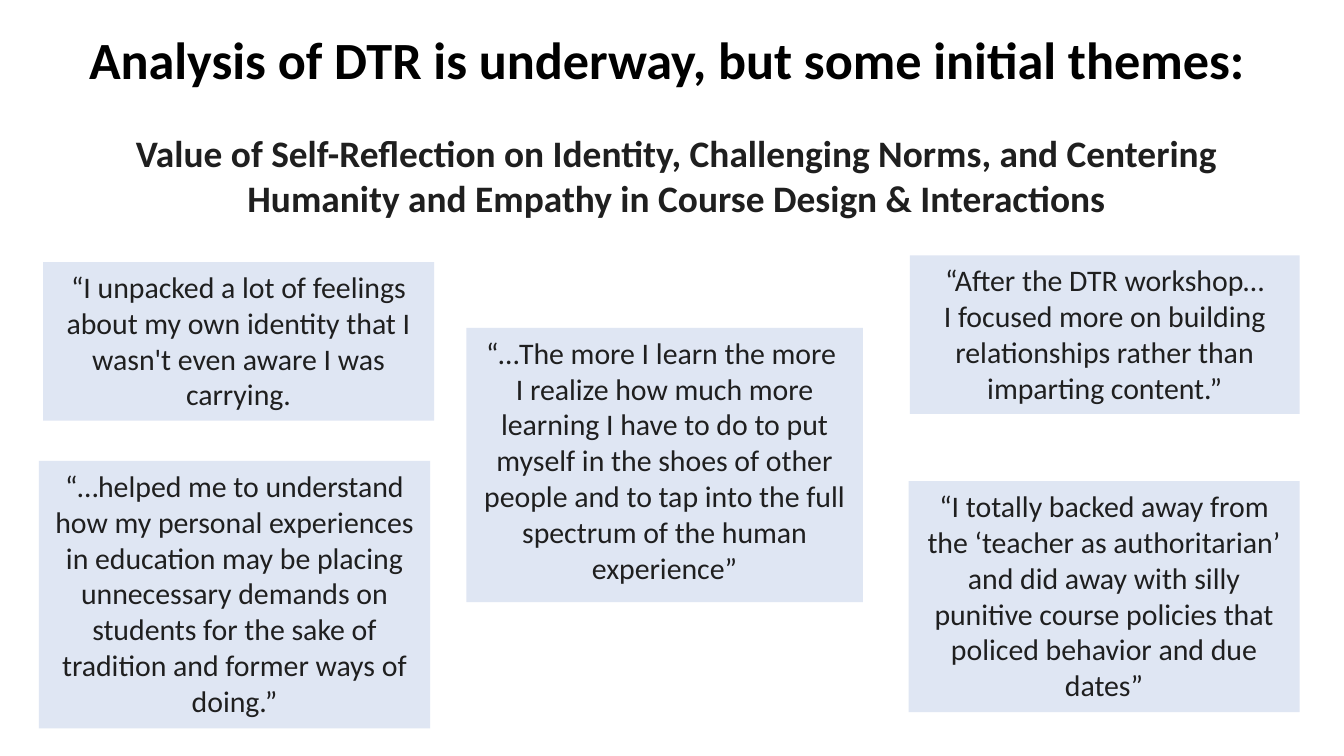
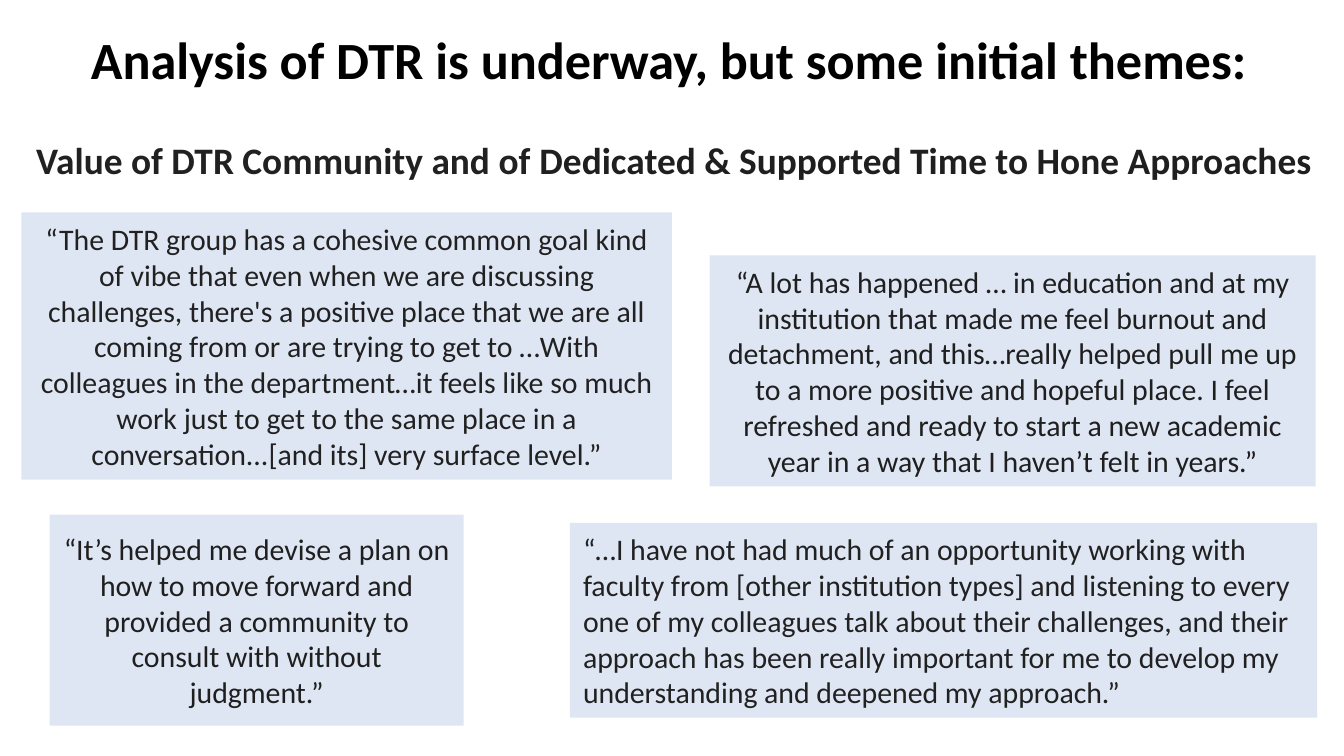
from typing import NamedTuple

from lxml.etree import SubElement
from pptx import Presentation
from pptx.dml.color import RGBColor as RGB
from pptx.enum.shapes import MSO_SHAPE as Shape
from pptx.enum.text import MSO_ANCHOR as Anchor
from pptx.enum.text import MSO_AUTO_SIZE as Fit
from pptx.enum.text import PP_ALIGN as Align
from pptx.oxml.ns import qn
from pptx.slide import Slide
from pptx.util import Inches, Pt

# Grid: square cells, 100 columns across
CELL = Inches(0.1)
COLS, ROWS = 100, 56.25

FONT = "Calibri"
COLORS = {"title": "000000", "ink": "1F1F1F", "soft": "212121", "card": "A4B8DF"}
ALPHA = 35  # percent opacity of a card
TITLE = "Analysis of DTR is underway, but some initial themes:"


class Box(NamedTuple):
    col: float
    row: float
    cols: float
    rows: float


class Run(NamedTuple):
    text: str
    color: str = "ink"


class Quote(NamedTuple):
    box: Box
    text: str
    color: str = "ink"
    align: Align = Align.CENTER


class Theme(NamedTuple):
    title: Box
    head: Box
    runs: list[Run]
    anchor: Anchor
    quotes: list[Quote]


THEMES = [
    Theme(
        Box(0, 1, 99.2, 6.7),
        Box(3.7, 9.2, 93.3, 7.7),
        [Run("Value of Self-Reflection on Identity, Challenging Norms, and Centering "
             "Humanity and Empathy in Course Design & Interactions")],
        Anchor.TOP,
        [
            Quote(Box(34.7, 24.4, 29.5, 20.4),
                  "“…The more I learn the more \nI realize how much more learning I have "
                  "to do to put myself in the shoes of other people and to tap into the "
                  "full spectrum of the human experience”"),
            Quote(Box(3.2, 19.5, 29.1, 11.8),
                  "“I unpacked a lot of feelings about my own identity that I wasn't "
                  "even aware I was carrying."),
            Quote(Box(67.7, 19, 29, 11.8),
                  "“After the DTR workshop…\nI focused more on building relationships "
                  "rather than imparting content.”"),
            Quote(Box(67.6, 35.8, 29.1, 17.2),
                  "“I totally backed away from the ‘teacher as authoritarian’ and did "
                  "away with silly punitive course policies that policed behavior and "
                  "due dates”"),
            Quote(Box(2.9, 34.3, 29.1, 19.9),
                  "“…helped me to understand how my personal experiences in education "
                  "may be placing unnecessary demands on students for the sake of "
                  "tradition and former ways of doing.”"),
        ],
    ),
    Theme(
        Box(1.6, 1, 96.3, 6.7),
        Box(1, 9.7, 98.3, 4.4),
        [Run("Value of DTR Community and of ", "soft"),
         Run("Dedicated & Supported Time to Hone Approaches")],
        Anchor.MIDDLE,
        [
            Quote(Box(1.6, 15.8, 48.4, 19.9),
                  "“The DTR group has a cohesive common goal kind of vibe that even when "
                  "we are discussing challenges, there's a positive place that we are "
                  "all coming from or are trying to get to …With colleagues in the "
                  "department…it feels like so much work just to get to the same place "
                  "in a conversation...[and its] very surface level.”", "soft"),
            Quote(Box(42.4, 38.9, 55.6, 14.5),
                  "“…I have not had much of an opportunity working with faculty from "
                  "[other institution types] and listening to every one of my "
                  "colleagues talk about their challenges, and their approach has been "
                  "really important for me to develop my understanding and deepened my "
                  "approach.”", "soft", Align.LEFT),
            Quote(Box(52.8, 19, 45.1, 17.2),
                  "“A lot has happened … in education and at my institution that made "
                  "me feel burnout and detachment, and this…really helped pull me up to "
                  "a more positive and hopeful place. I feel refreshed and ready to "
                  "start a new academic year in a way that I haven’t felt in years.”"),
            Quote(Box(3.7, 38.3, 30.8, 15.7),
                  "“It’s helped me devise a plan on how to move forward and provided a "
                  "community to consult with without judgment.”"),
        ],
    ),
]


def place(box: Box) -> list[int]:
    return [round(n * CELL) for n in box]


def write(shape, runs: list[Run], size: int, bold: bool = False,
          align: Align = Align.CENTER, anchor: Anchor = Anchor.TOP) -> None:
    frame = shape.text_frame
    frame.word_wrap = True
    frame.auto_size = Fit.SHAPE_TO_FIT_TEXT
    frame.vertical_anchor = anchor
    para = frame.paragraphs[0]
    para.alignment = align
    font = para.font
    font.name, font.size, font.bold = FONT, Pt(size), bold
    if len(runs) == 1:
        para.text = runs[0].text
        font.color.rgb = RGB.from_string(COLORS[runs[0].color])
        return
    for item in runs:
        run = para.add_run()
        run.text = item.text
        run.font.color.rgb = RGB.from_string(COLORS[item.color])


def add_title(slide: Slide, box: Box) -> None:
    label = slide.shapes.add_textbox(*place(box))
    write(label, [Run(TITLE, "title")], 28, True)
    frame = label.text_frame
    frame.margin_top = frame.margin_bottom = CELL


def add_head(slide: Slide, box: Box, runs: list[Run]) -> None:
    write(slide.shapes.add_textbox(*place(box)), runs, 20, True)


def add_quote(slide: Slide, quote: Quote, anchor: Anchor) -> None:
    card = slide.shapes.add_shape(Shape.RECTANGLE, *place(quote.box))
    card.shadow.inherit = False
    card.line.fill.background()
    card.fill.solid()
    card.fill.fore_color.rgb = RGB.from_string(COLORS["card"])
    tint = card.fill._xPr.find(qn("a:solidFill"))[0]
    SubElement(tint, qn("a:alpha")).set("val", str(ALPHA * 1000))
    write(card, [Run(quote.text, quote.color)], 16, False, quote.align, anchor)


def main() -> None:
    deck = Presentation()
    deck.slide_width, deck.slide_height = round(COLS * CELL), round(ROWS * CELL)
    for theme in THEMES:
        slide = deck.slides.add_slide(deck.slide_layouts[6])
        add_title(slide, theme.title)
        add_head(slide, theme.head, theme.runs)
        for quote in theme.quotes:
            add_quote(slide, quote, theme.anchor)
    deck.save("out.pptx")


if __name__ == "__main__":
    main()
